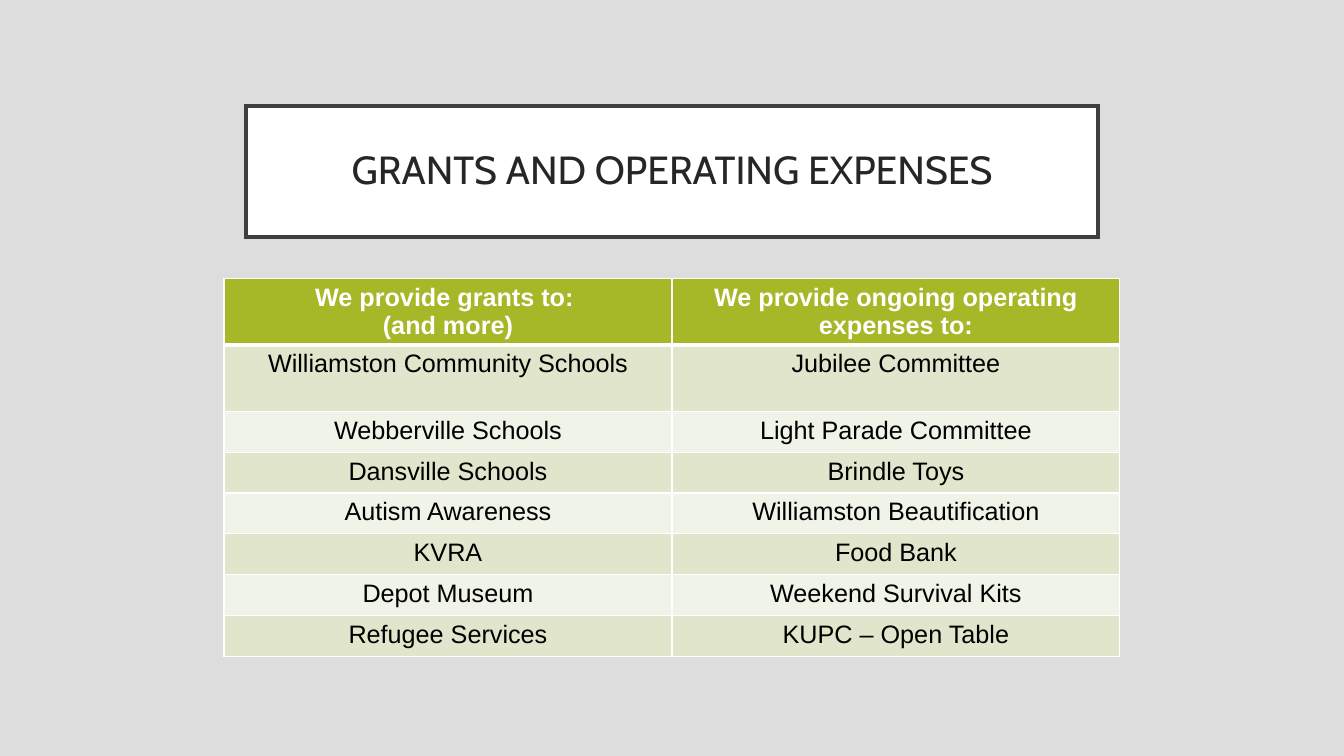
from dataclasses import dataclass

from lxml.etree import SubElement
from pptx import Presentation
from pptx.dml.color import RGBColor
from pptx.enum.shapes import MSO_SHAPE as Shape
from pptx.enum.text import MSO_ANCHOR as Anchor, PP_ALIGN as Align
from pptx.oxml.ns import qn
from pptx.util import Pt


@dataclass(frozen=True)
class Theme:
    background: str = "DDDDDD"
    white: str = "FFFFFF"
    frame: str = "3F3F3F"
    title_text: str = "262626"
    body_text: str = "000000"
    header_fill: str = "A6B727"
    bands: tuple = ("E0E5CB", "F0F3E7")
    title_font: str = "Cabin"
    body_font: str = "Arial"
    title_size: float = 28
    body_size: float = 18
    frame_width: float = 2.5
    grid_width: float = 1
    header_rule: float = 3


class SlideBuilder:
    def __init__(self, slide, theme):
        self.slide = slide
        self.theme = theme

    def paint(self, fill, color):
        fill.solid()
        fill.fore_color.rgb = RGBColor.from_string(color)

    def style_text(self, text_frame, font_name, size, color, bold=False):
        for paragraph in text_frame.paragraphs:
            paragraph.alignment = Align.CENTER
            for run in paragraph.runs:
                run.font.name = font_name
                run.font.size = Pt(size)
                run.font.bold = bold
                run.font.color.rgb = RGBColor.from_string(color)

    def background(self):
        self.paint(self.slide.background.fill, self.theme.background)

    def title(self, text, left, top, width, height, inset):
        theme = self.theme
        shape = self.slide.shapes.add_shape(
            Shape.RECTANGLE, Pt(left), Pt(top), Pt(width), Pt(height))
        shape.shadow.inherit = False
        self.paint(shape.fill, theme.white)
        self.paint(shape.line.fill, theme.frame)
        shape.line.width = Pt(theme.frame_width)
        outline = shape._element.spPr.find(qn("a:ln"))
        SubElement(outline, qn("a:miter"), lim="800000")
        text_frame = shape.text_frame
        text_frame.word_wrap = True
        text_frame.vertical_anchor = Anchor.MIDDLE
        text_frame.margin_left = text_frame.margin_right = Pt(inset)
        text_frame.margin_top = text_frame.margin_bottom = Pt(inset)
        text_frame.text = text
        text_frame.paragraphs[0].line_spacing = 0.9
        self.style_text(text_frame, theme.title_font, theme.title_size, theme.title_text)

    def border(self, cell, side, width):
        properties = cell._tc.get_or_add_tcPr()
        line = SubElement(properties, qn(f"a:ln{side}"), w=str(Pt(width)))
        fill = SubElement(line, qn("a:solidFill"))
        SubElement(fill, qn("a:srgbClr"), val=self.theme.white)

    def cell(self, cell, text, row):
        theme = self.theme
        header = row == 0
        widths = {side: theme.grid_width for side in "LRTB"}
        if header:
            widths["B"] = theme.header_rule
        elif row == 1:
            widths["T"] = theme.header_rule
        for side, width in widths.items():
            self.border(cell, side, width)
        self.paint(cell.fill, theme.header_fill if header else theme.bands[(row - 1) % 2])
        cell.text_frame.text = text
        color = theme.white if header else theme.body_text
        self.style_text(cell.text_frame, theme.body_font, theme.body_size, color, header)

    def table(self, rows, left, top, column_width, row_heights):
        columns = len(rows[0])
        table = self.slide.shapes.add_table(
            len(rows), columns, Pt(left), Pt(top),
            Pt(column_width * columns), Pt(sum(row_heights))).table
        for column in table.columns:
            column.width = Pt(column_width)
        for index, (texts, height) in enumerate(zip(rows, row_heights)):
            table.rows[index].height = Pt(height)
            for column, text in enumerate(texts):
                self.cell(table.cell(index, column), text, index)


RECIPIENTS = [
    ("We provide grants to: \n(and more)", "We provide ongoing operating expenses to:"),
    ("Williamston Community Schools", "Jubilee Committee"),
    ("Webberville Schools", "Light Parade Committee"),
    ("Dansville Schools", "Brindle Toys"),
    ("Autism Awareness", "Williamston Beautification"),
    ("KVRA", "Food Bank"),
    ("Depot Museum", "Weekend Survival Kits"),
    ("Refugee Services", "KUPC – Open Table"),
]


def main():
    presentation = Presentation()
    presentation.slide_width = Pt(960)
    presentation.slide_height = Pt(540)
    slide = presentation.slides.add_slide(presentation.slide_layouts[6])
    builder = SlideBuilder(slide, Theme())
    builder.background()
    builder.title("GRANTS AND OPERATING EXPENSES", 175.7, 75.6, 608.6, 93.6, inset=14.4)
    header, first, regular = 47.3, 47.7, 29.15
    heights = [header, first] + [regular] * (len(RECIPIENTS) - 2)
    builder.table(RECIPIENTS, 160, 198.7, 320, heights)
    presentation.save("out.pptx")


if __name__ == "__main__":
    main()
